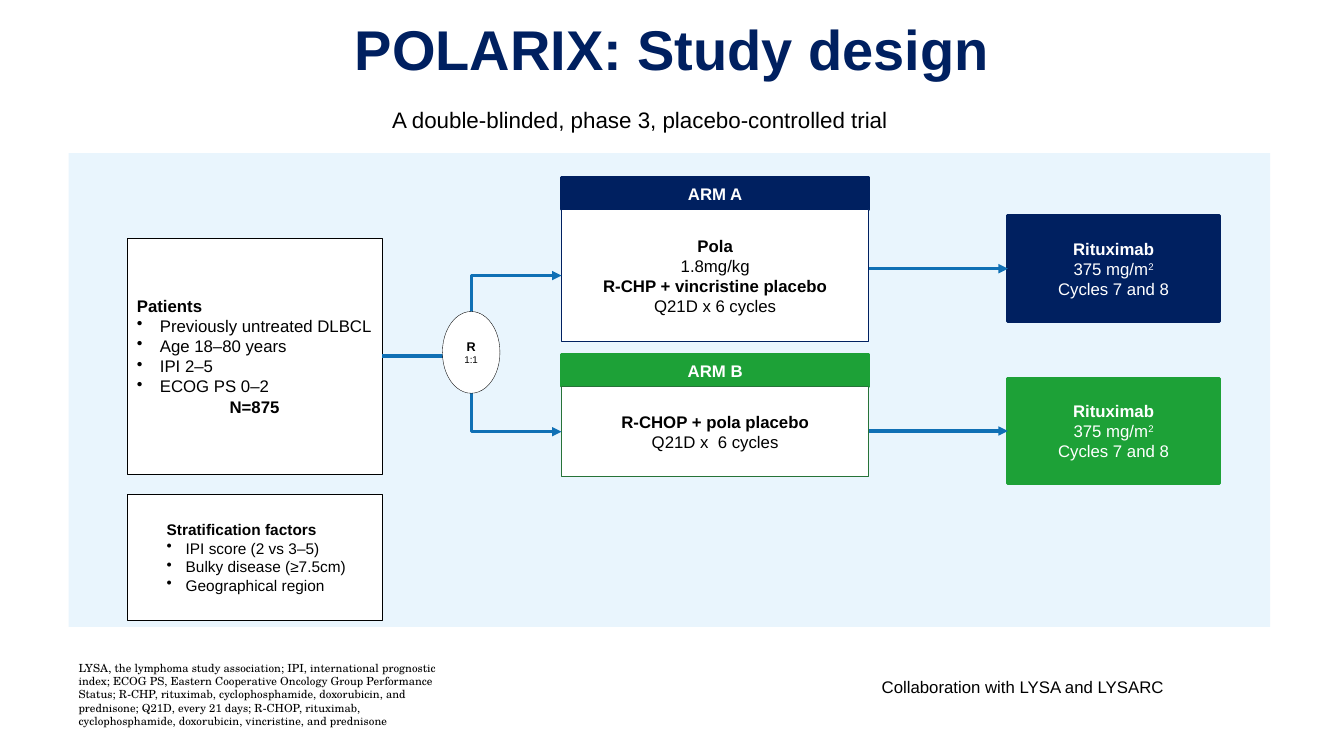
from dataclasses import dataclass

from lxml.etree import SubElement
from pptx import Presentation
from pptx.dml.color import RGBColor
from pptx.enum.shapes import MSO_CONNECTOR, MSO_SHAPE
from pptx.enum.text import MSO_ANCHOR, PP_ALIGN
from pptx.oxml.ns import qn
from pptx.util import Cm, Pt

COLORS = {
    "navy": "002060",
    "green": "1DA137",
    "dark green": "267338",
    "arrow": "1070B5",
    "panel": "E9F5FD",
    "white": "FFFFFF",
    "black": "000000",
}


@dataclass
class Line:
    text: str
    bold: bool = False
    indent: float = 0
    align: PP_ALIGN = None
    size: float = None
    superscript: str = ""


class StudySlide:
    """Draws the elements of a study design slide in one shared style."""

    def __init__(self, slide, font="Arial", size=12):
        self.shapes = slide.shapes
        self.font = font
        self.size = size

    def color(self, name):
        return RGBColor.from_string(COLORS[name])

    def set_lines(self, shape, lines, color="black", align=PP_ALIGN.LEFT,
                  anchor=MSO_ANCHOR.MIDDLE, size=None, font=None):
        frame = shape.text_frame
        frame.word_wrap = True
        frame.vertical_anchor = anchor
        for number, line in enumerate(lines):
            paragraph = frame.add_paragraph() if number else frame.paragraphs[0]
            paragraph.alignment = line.align or align
            paragraph.font.name = font or self.font
            paragraph.font.size = Pt(line.size or size or self.size)
            paragraph.font.bold = line.bold
            paragraph.font.color.rgb = self.color(color)
            paragraph.add_run().text = line.text
            if line.superscript:
                raised = paragraph.add_run()
                raised.text = line.superscript
                raised.font._element.set("baseline", "30000")
            if line.indent:
                self.bullet(paragraph, line.indent)

    def bullet(self, paragraph, indent):
        properties = paragraph._p.get_or_add_pPr()
        properties.set("marL", str(Cm(indent)))
        properties.set("indent", str(-Cm(indent)))
        mark = properties.makeelement(qn("a:buChar"), {"char": "•"})
        properties.insert(0, mark)

    def text(self, box, line, **style):
        label = self.shapes.add_textbox(*map(Cm, box))
        self.set_lines(label, [line], **style)
        return label

    def box(self, box, fill="white", line=None, width=0.25, lines=(),
            kind=MSO_SHAPE.RECTANGLE, **style):
        shape = self.shapes.add_shape(kind, *map(Cm, box))
        shape.shadow.inherit = False
        shape.fill.solid()
        shape.fill.fore_color.rgb = self.color(fill)
        if line:
            shape.line.color.rgb = self.color(line)
            shape.line.width = Pt(width)
        else:
            shape.line.fill.background()
        self.set_lines(shape, lines, **style)
        return shape

    def arrow(self, kind, source, target):
        start = source.left + source.width
        level = target.top + target.height // 2
        link = self.shapes.add_connector(kind, start, level, target.left, level)
        if kind == MSO_CONNECTOR.ELBOW:
            link.begin_connect(source, 3)
        link.end_connect(target, 1)
        link.line.color.rgb = self.color("arrow")
        link.line.width = Pt(2.25)
        SubElement(link.line._get_or_add_ln(), qn("a:tailEnd"), type="triangle")
        SubElement(link._element.spPr, qn("a:effectLst"))

    def arm(self, name, top, height, regimen, color, border):
        left, width, header = 14.15, 7.75, 0.81
        self.box((left, top, width, header), color, color, 2,
                 [Line(name, bold=True)], color="white", align=PP_ALIGN.CENTER)
        return self.box((left, top + header, width, height), "white", border, 0.75,
                        regimen, align=PP_ALIGN.CENTER)

    def rituximab(self, top, color):
        doses = [
            Line("Rituximab", bold=True),
            Line("375 mg/m", superscript="2"),
            Line("Cycles 7 and 8"),
        ]
        return self.box((25.4, top, 5.33, 2.66), color, color, 2, doses,
                        color="white", align=PP_ALIGN.CENTER)


def main():
    deck = Presentation()
    deck.slide_width, deck.slide_height = Cm(33.87), Cm(19.05)
    study = StudySlide(deck.slides.add_slide(deck.slide_layouts[6]))

    title = study.text((5.33, 0.28, 23.21, 2.51), Line("POLARIX: Study design", bold=True),
                       color="navy", size=40, align=PP_ALIGN.CENTER)
    title.text_frame.paragraphs[0].line_spacing = Pt(30)
    study.text((9.63, 2.54, 13.5, 0.94),
               Line("A double-blinded, phase 3, placebo-controlled trial"),
               size=16, anchor=MSO_ANCHOR.TOP)
    study.text((21.97, 16.94, 10.03, 1.27), Line("Collaboration with LYSA and LYSARC"),
               anchor=MSO_ANCHOR.TOP)
    study.text((1.73, 17.48, 10, 0.99), Line(
        "LYSA, the lymphoma study association; IPI, international prognostic index; "
        "ECOG PS, Eastern Cooperative Oncology Group Performance Status; "
        "R-CHP, rituximab, cyclophosphamide, doxorubicin, and prednisone; "
        "Q21D, every 21 days; R-CHOP, rituximab, cyclophosphamide, doxorubicin, "
        "vincristine, and prednisone"),
        size=8, font="TeX Gyre Schola", anchor=MSO_ANCHOR.BOTTOM)

    study.box((1.73, 3.86, 30.28, 11.94), "panel")

    criteria = ["Previously untreated DLBCL", "Age 18–80 years", "IPI 2–5", "ECOG PS 0–2"]
    patients = study.box((3.2, 6, 6.43, 5.94), line="black", lines=[
        Line("Patients", bold=True),
        *(Line(criterion, indent=0.58) for criterion in criteria),
        Line("N=875", bold=True, align=PP_ALIGN.CENTER),
    ])

    factors = ["IPI score (2 vs 3–5)", "Bulky disease (≥7.5cm)", "Geographical region"]
    stratification = study.box((3.2, 12.45, 6.43, 3.18), line="black", width=0.5, size=11, lines=[
        Line("Stratification factors", bold=True),
        *(Line(factor, indent=0.48) for factor in factors),
    ])
    stratification.text_frame.margin_left = Cm(1)

    arm_a = study.arm("ARM A", 4.47, 3.33, [
        Line("Pola", bold=True),
        Line("1.8mg/kg"),
        Line("R-CHP + vincristine placebo", bold=True),
        Line("Q21D x 6 cycles"),
    ], "navy", "navy")
    arm_b = study.arm("ARM B", 8.94, 2.26, [
        Line("R-CHOP + pola placebo", bold=True),
        Line("Q21D x  6 cycles"),
    ], "green", "dark green")

    for arm, top, color in [(arm_a, 5.44, "navy"), (arm_b, 9.53, "green")]:
        study.arrow(MSO_CONNECTOR.ELBOW, patients, arm)
        study.arrow(MSO_CONNECTOR.STRAIGHT, arm, study.rituximab(top, color))

    study.box((11.15, 7.85, 1.45, 2.06), line="black", kind=MSO_SHAPE.OVAL,
              align=PP_ALIGN.CENTER,
              lines=[Line("R", bold=True, size=9), Line("1:1", size=7)])

    deck.save("out.pptx")


if __name__ == "__main__":
    main()
